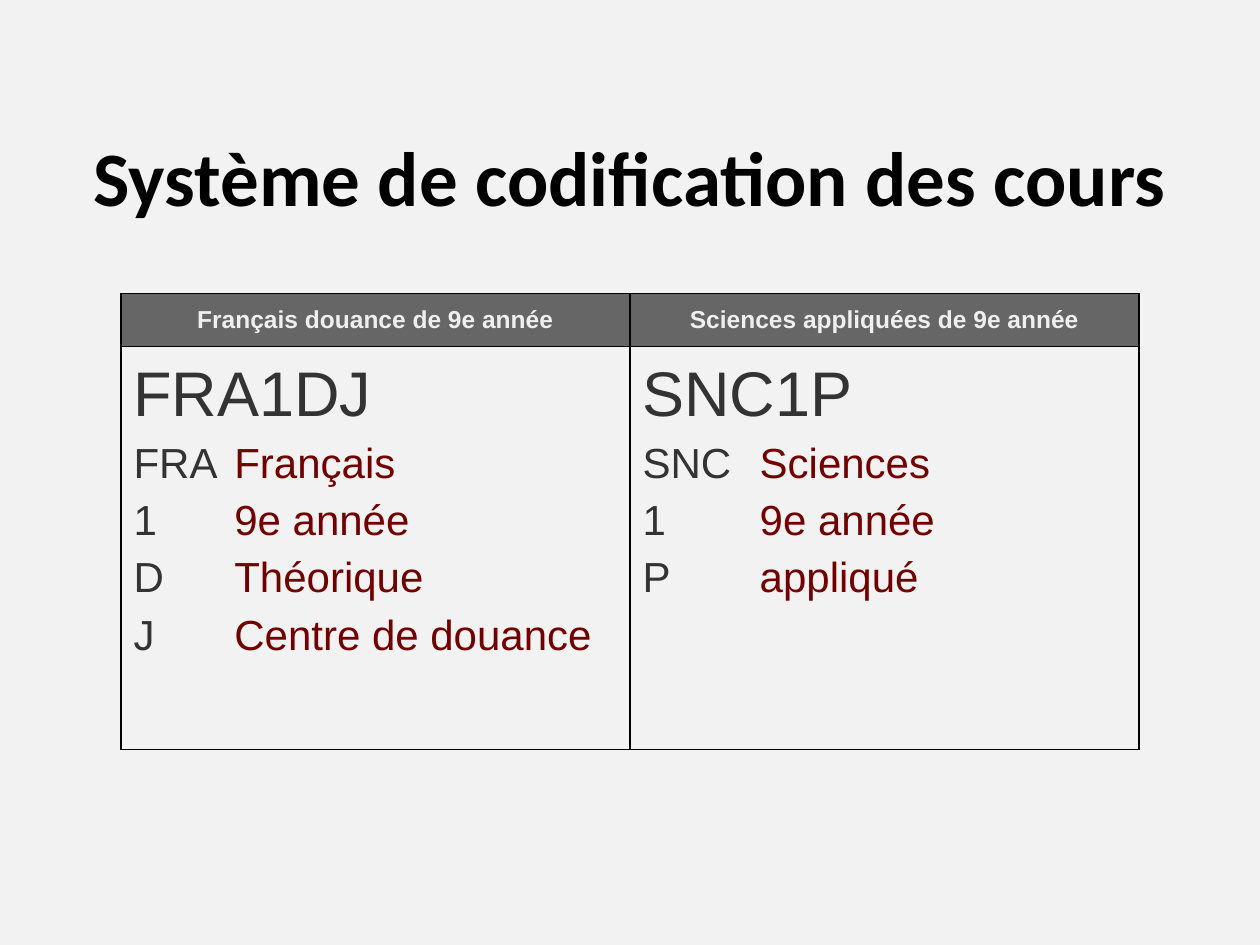
from lxml.etree import SubElement
from pptx import Presentation
from pptx.dml.color import RGBColor
from pptx.enum.text import MSO_ANCHOR, PP_ALIGN
from pptx.oxml import parse_xml
from pptx.oxml.ns import nsdecls, qn
from pptx.util import Inches, Pt

BACKGROUND = RGBColor(0xF2, 0xF2, 0xF2)
BLACK = RGBColor(0, 0, 0)
HEADER_FILL = RGBColor(0x66, 0x66, 0x66)
HEADER_TEXT = RGBColor(0xEF, 0xEF, 0xEF)
CODE_TEXT = RGBColor(0x33, 0x33, 0x33)
MEANING_TEXT = RGBColor(0x72, 0, 0)

# Header, course code, meaning of each part, tab stop before the meanings
COURSES = [
    ("Français douance de 9e année", "FRA1DJ",
     [("FRA", "Français"), ("1", "9e année"), ("D", "Théorique"),
      ("J", "Centre de douance")], Inches(0.8)),
    ("Sciences appliquées de 9e année", "SNC1P",
     [("SNC", "Sciences"), ("1", "9e année"), ("P", "appliqué")], Inches(0.93)),
]


def add_run(paragraph, text, size, color, bold=False, font_name="Arial"):
    run = paragraph.add_run()
    run.text = text
    font = run.font
    font.name, font.size, font.bold = font_name, Pt(size), bold
    font.color.rgb = color


def add_title(slide, text):
    title = slide.shapes.title
    title.left, title.top = Inches(0.5), Inches(0.77)
    title.width, title.height = Inches(9), Inches(1.25)
    title.text_frame.vertical_anchor = MSO_ANCHOR.MIDDLE
    paragraph = title.text_frame.paragraphs[0]
    paragraph.alignment = PP_ALIGN.CENTER
    add_run(paragraph, text, 44, BLACK, bold=True, font_name="Calibri")


def add_tab_stop(paragraph, position):
    properties = paragraph._p.get_or_add_pPr()
    tab_list = SubElement(properties, qn("a:tabLst"))
    SubElement(tab_list, qn("a:tab"), pos=str(position), algn="l")


def format_cell(cell, fill_color=None):
    """Set the margins, the fill (none by default) and a thin black border."""
    cell.margin_left = cell.margin_right = Inches(0.1)
    cell.margin_top = cell.margin_bottom = Inches(0.1)
    if fill_color is None:
        cell.fill.background()
    else:
        cell.fill.solid()
        cell.fill.fore_color.rgb = fill_color
    properties = cell._tc.get_or_add_tcPr()
    for index, side in enumerate(("lnL", "lnR", "lnT", "lnB")):
        properties.insert(index, parse_xml(
            f'<a:{side} {nsdecls("a")} w="{Pt(0.75)}"><a:solidFill>'
            f'<a:srgbClr val="{BLACK}"/></a:solidFill></a:{side}>'))


def fill_header(cell, text):
    format_cell(cell, HEADER_FILL)
    paragraph = cell.text_frame.paragraphs[0]
    paragraph.alignment = PP_ALIGN.CENTER
    add_run(paragraph, text, 14, HEADER_TEXT, bold=True)


def fill_explanation(cell, course_code, parts, tab_position):
    format_cell(cell)
    add_run(cell.text_frame.paragraphs[0], course_code, 36, CODE_TEXT)
    for symbol, meaning in parts:
        paragraph = cell.text_frame.add_paragraph()
        paragraph.space_before = Pt(6)
        add_tab_stop(paragraph, tab_position)
        add_run(paragraph, symbol, 24, CODE_TEXT)
        add_run(paragraph, "\t" + meaning, 24, MEANING_TEXT)


def add_course_table(slide):
    frame = slide.shapes.add_table(2, len(COURSES), Inches(0.96), Inches(2.33),
                                   Inches(8.08), Inches(3.62))
    table = frame.table
    table.horz_banding = False
    table.rows[0].height = Inches(0.42)
    table.rows[1].height = Inches(3.2)
    for column, (header, course_code, parts, tab_position) in enumerate(COURSES):
        fill_header(table.cell(0, column), header)
        fill_explanation(table.cell(1, column), course_code, parts, tab_position)


def main():
    presentation = Presentation()
    presentation.slide_width, presentation.slide_height = Inches(10), Inches(7.5)
    slide = presentation.slides.add_slide(presentation.slide_layouts[5])
    slide.background.fill.solid()
    slide.background.fill.fore_color.rgb = BACKGROUND
    add_title(slide, "Système de codification des cours")
    add_course_table(slide)
    presentation.save("out.pptx")


if __name__ == "__main__":
    main()
